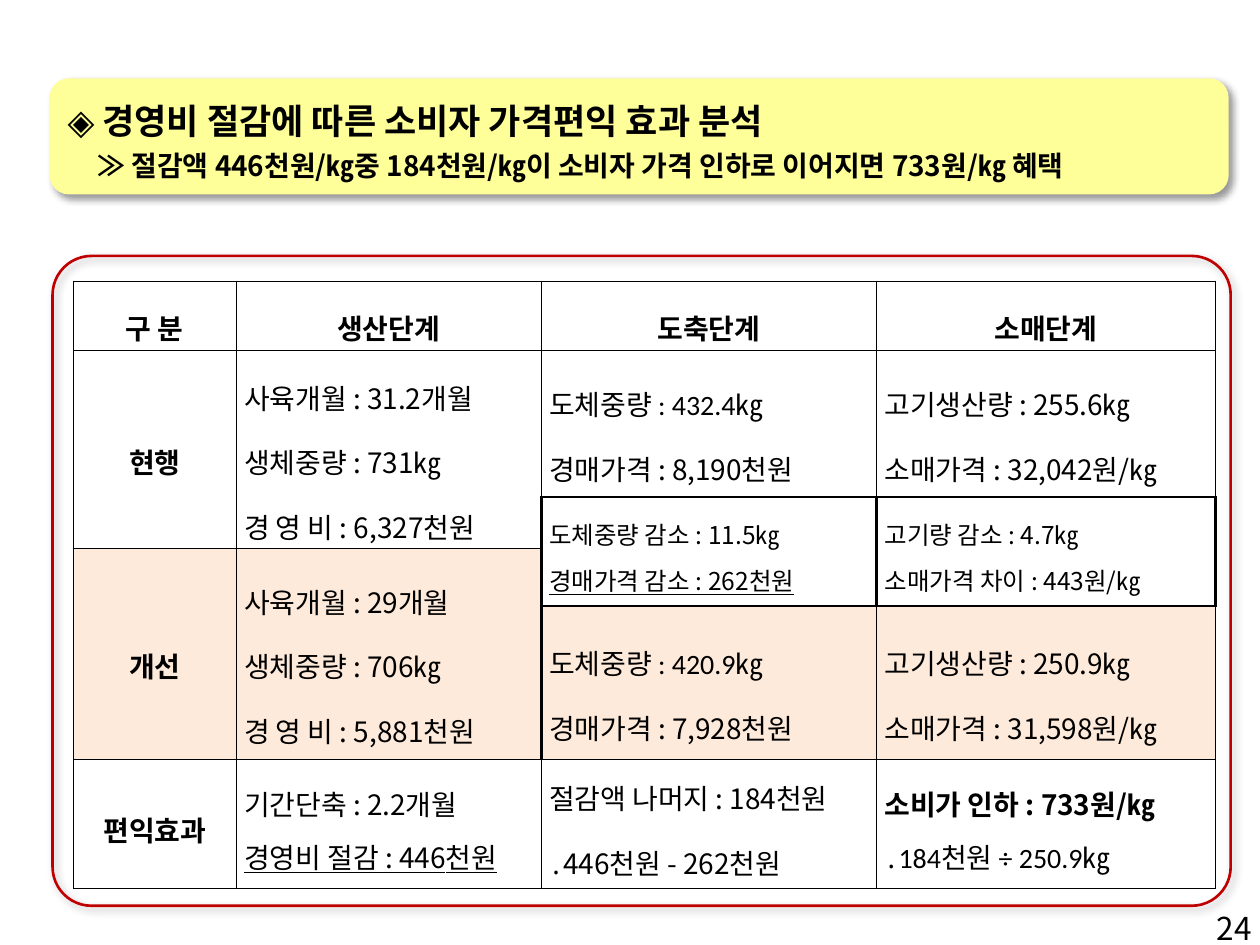
from lxml import etree
from pptx import Presentation
from pptx.dml.color import RGBColor
from pptx.enum.shapes import MSO_SHAPE
from pptx.enum.text import MSO_ANCHOR, PP_ALIGN
from pptx.oxml.ns import qn
from pptx.util import Cm, Pt

ROUND_RECT = MSO_SHAPE.ROUNDED_RECTANGLE
MIDDLE = MSO_ANCHOR.MIDDLE
LEFT, CENTER, RIGHT, JUSTIFY = PP_ALIGN.LEFT, PP_ALIGN.CENTER, PP_ALIGN.RIGHT, PP_ALIGN.JUSTIFY
FONT, NARROW = "Noto Sans CJK KR", "Calibri"
BLACK, RED, YELLOW, PEACH, WHITE = "000000", "C00000", "FFFF99", "FDEADA", "FFFFFF"
THIN, THICK = Pt(0.28), Pt(1.7)

COLUMNS = [3.28, 6.15, 6.76, 6.83]
ROWS = [1.4, 2.96, 1.03, 1.17, 3.08, 2.61]
HEADINGS = ["구 분", "생산단계", "도축단계", "소매단계"]
LABEL = {"align": CENTER, "bold": True}
CLOSE = {"spacing": 1.3}
CHANGE = {"spacing": 1.3, "size": 14}
CALIBRI = {"font": NARROW}
UNDERLINED = {"underline": True}

# (first row, last row, column, fill, lines)
CELLS = [(0, 0, c, WHITE, [(text, LABEL)]) for c, text in enumerate(HEADINGS)] + [
    (1, 2, 0, WHITE, [("현행", LABEL)]),
    (1, 2, 1, WHITE, [("사육개월 : 31.2개월", {}), ("생체중량 : 731㎏", {}),
                      ("경 영 비 : 6,327천원", {})]),
    (1, 1, 2, WHITE, [("도체중량 : 432.4㎏", CALIBRI), ("경매가격 : 8,190천원", {})]),
    (1, 1, 3, WHITE, [("고기생산량 : 255.6㎏", {}), ("소매가격 : 32,042원/㎏", {})]),
    (2, 3, 2, WHITE, [("도체중량 감소 : 11.5㎏", CHANGE),
                      ("경매가격 감소 : 262천원", CHANGE | UNDERLINED)]),
    (2, 3, 3, WHITE, [("고기량 감소 : 4.7㎏", CHANGE), ("소매가격 차이 : 443원/㎏", CHANGE)]),
    (3, 4, 0, PEACH, [("개선", LABEL)]),
    (3, 4, 1, PEACH, [("사육개월 : 29개월", {}), ("생체중량 : 706㎏", {}),
                      ("경 영 비 : 5,881천원", {})]),
    (4, 4, 2, PEACH, [("도체중량 : 420.9㎏", CALIBRI), ("경매가격 : 7,928천원", {})]),
    (4, 4, 3, PEACH, [("고기생산량 : 250.9㎏", {}), ("소매가격 : 31,598원/㎏", {})]),
    (5, 5, 0, WHITE, [("편익효과", LABEL | CLOSE)]),
    (5, 5, 1, WHITE, [("기간단축 : 2.2개월", CLOSE),
                      ("경영비 절감 : 446천원", CLOSE | UNDERLINED)]),
    (5, 5, 2, WHITE, [("절감액 나머지 : 184천원", CLOSE), ("․446천원 - 262천원", {})]),
    (5, 5, 3, WHITE, [("소비가 인하 : 733원/㎏", CLOSE | {"bold": True}),
                      ("․184천원 ÷ 250.9㎏", CLOSE | CALIBRI)]),
]


def rgb(value):
    """Return the colour for a hex string."""
    return RGBColor.from_string(value)


def write_lines(tf, lines):
    """Write one styled paragraph for each line into a text frame."""
    for i, (text, style) in enumerate(lines):
        p = tf.paragraphs[0] if i == 0 else tf.add_paragraph()
        p.text = text
        p.alignment = style.get("align", JUSTIFY)
        p.line_spacing = style.get("spacing", 1.6)
        p.font.size = Pt(style.get("size", 16))
        p.font.bold = style.get("bold", False)
        p.font.underline = style.get("underline", False)
        p.font.color.rgb = rgb(BLACK)
        p.font.name = style.get("font", FONT)
        pPr = p._p.get_or_add_pPr()
        etree.SubElement(pPr.find(qn("a:defRPr")), qn("a:ea"), typeface=FONT)
        if "indent" in style:
            pPr.set("marL", str(Cm(style["indent"])))


def add_shadow(sp, alpha, blur, distance, angle):
    """Give a shape a black outer shadow."""
    sp.shadow.inherit = False
    effects = sp._element.spPr.find(qn("a:effectLst"))
    shadow = etree.SubElement(
        effects, qn("a:outerShdw"), blurRad=str(Pt(blur)), dist=str(Pt(distance)),
        dir=str(angle * 60000), algn="tl", rotWithShape="0")
    color = etree.SubElement(shadow, qn("a:srgbClr"), val=BLACK)
    etree.SubElement(color, qn("a:alpha"), val=str(alpha * 1000))


def set_borders(cell, widths):
    """Draw the left, right, top and bottom borders of a cell."""
    tcPr = cell._tc.get_or_add_tcPr()
    for i, (side, width) in enumerate(zip("LRTB", widths)):
        ln = etree.Element(qn(f"a:ln{side}"), w=str(width))
        fill = etree.SubElement(ln, qn("a:solidFill"))
        etree.SubElement(fill, qn("a:srgbClr"), val=BLACK)
        tcPr.insert(i, ln)


def border_widths(first, last, col):
    """Return the border widths, heavier around the change boxes."""
    if col < 2:
        return [THIN] * 4
    if (first, last) == (2, 3):
        return [THICK] * 4
    return [THIN, THIN, THICK if first == 4 else THIN, THICK if last == 1 else THIN]


def add_title(s, x, y, w, h):
    """Add the yellow title banner."""
    sp = s.shapes.add_shape(ROUND_RECT, Cm(x), Cm(y), Cm(w), Cm(h))
    sp.fill.solid()
    sp.fill.fore_color.rgb = rgb(YELLOW)
    sp.line.fill.background()
    add_shadow(sp, 40, 4, 3, 45)
    tf = sp.text_frame
    tf.word_wrap = False
    tf.vertical_anchor = MIDDLE
    style = {"align": LEFT, "bold": True, "spacing": 1.2}
    write_lines(tf, [
        ("◈ 경영비 절감에 따른 소비자 가격편익 효과 분석", style | {"size": 20}),
        ("≫ 절감액 446천원/㎏중 184천원/㎏이 소비자 가격 인하로 이어지면 733원/㎏ 혜택",
         style | {"indent": 0.6}),
    ])


def add_analysis(s, x, y, w, h):
    """Add the red frame and the price benefit table inside it."""
    sp = s.shapes.add_shape(ROUND_RECT, Cm(x), Cm(y), Cm(w), Cm(h))
    sp.adjustments[0] = 0.06
    sp.fill.background()
    sp.line.color.rgb = rgb(RED)
    sp.line.width = Pt(1.5)
    add_shadow(sp, 30, 4.5, 2.6, 53)

    table = s.shapes.add_table(len(ROWS), len(COLUMNS), Cm(x + 0.42), Cm(y + 0.5),
                               Cm(sum(COLUMNS)), Cm(sum(ROWS))).table
    for column, width in zip(table.columns, COLUMNS):
        column.width = Cm(width)
    for row, height in zip(table.rows, ROWS):
        row.height = Cm(height)
    for first, last, col, color, lines in CELLS:
        cell = table.cell(first, col)
        if last > first:
            cell.merge(table.cell(last, col))
        for row in range(first, last + 1):
            part = table.cell(row, col)
            part.fill.solid()
            part.fill.fore_color.rgb = rgb(color)
            set_borders(part, border_widths(first, last, col))
        cell.margin_left = cell.margin_right = Cm(0.16)
        cell.margin_top = cell.margin_bottom = Cm(0.05)
        cell.vertical_anchor = MIDDLE
        write_lines(cell.text_frame, lines)


def add_page_number(s, x, y, w, h):
    """Add the page number at the lower right."""
    tf = s.shapes.add_textbox(Cm(x), Cm(y), Cm(w), Cm(h)).text_frame
    tf.word_wrap = True
    tf.vertical_anchor = MIDDLE
    write_lines(tf, [("24", {"align": RIGHT, "size": 18, "spacing": 1.0})])


def main():
    """Build and save the slide."""
    prs = Presentation()
    prs.slide_width, prs.slide_height = Cm(25.4), Cm(19.05)
    s = prs.slides.add_slide(prs.slide_layouts[6])
    add_page_number(s, 19.56, 18.19, 5.92, 1.02)
    add_analysis(s, 1.06, 5.16, 23.75, 13.1)
    add_title(s, 1, 1.58, 23.77, 2.34)
    prs.save("out.pptx")


if __name__ == "__main__":
    main()
